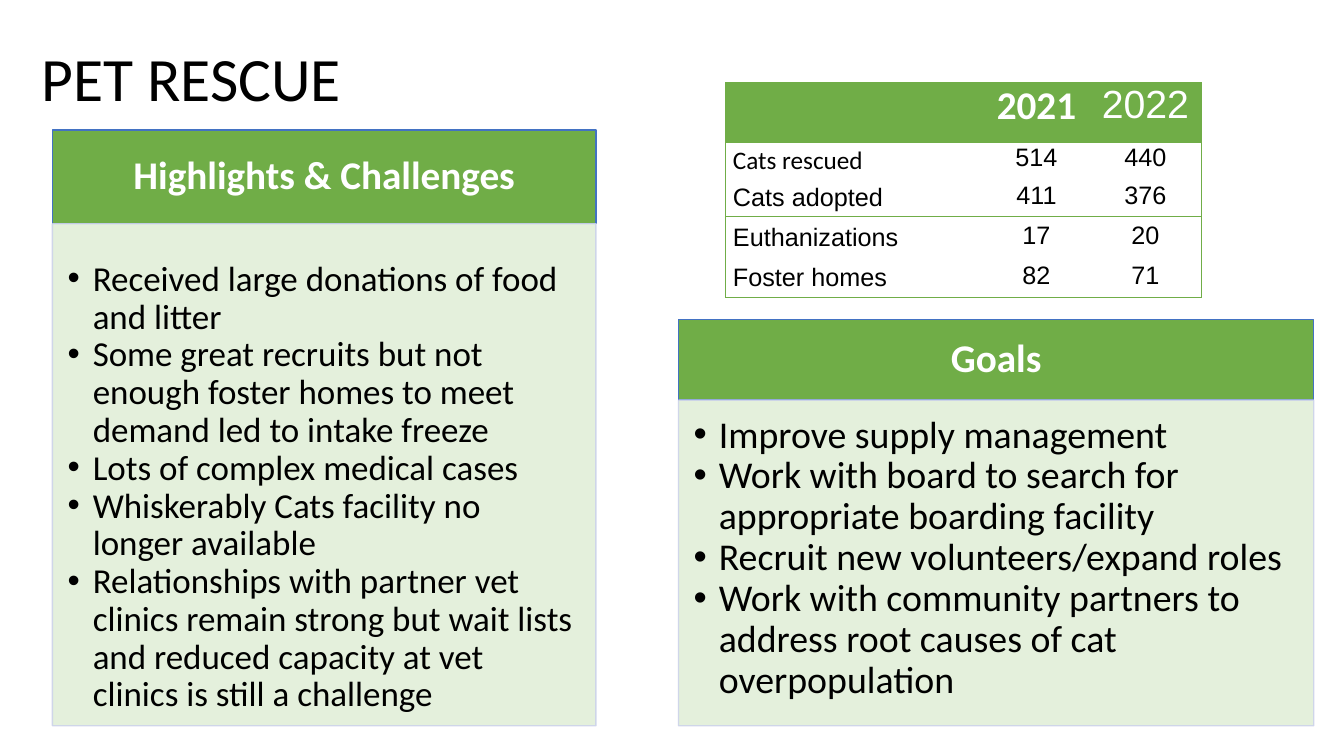
from lxml import etree
from pptx import Presentation
from pptx.dml.color import RGBColor
from pptx.enum import text
from pptx.oxml import ns
from pptx.util import Inches, Pt

TITLE = "PET RESCUE"
HIGHLIGHTS = [
    "Received large donations of food and litter",
    "Some great recruits but not enough foster homes to meet demand led to intake freeze",
    "Lots of complex medical cases",
    "Whiskerably Cats facility no longer available",
    "Relationships with partner vet clinics remain strong but wait lists "
    "and reduced capacity at vet clinics is still a challenge",
]
GOALS = [
    "Improve supply management",
    "Work with board to search for appropriate boarding facility",
    "Recruit new volunteers/expand roles",
    "Work with community partners to address root causes of cat overpopulation",
]
# heading, items, left, top, width, heading height, item size, top inset,
# placeholder numbers of heading and list
PANELS = [
    ("Highlights & Challenges", HIGHLIGHTS, 0.52, 1.29, 5.39, 0.93, 25, 0.37, (1, 2)),
    ("Goals", GOALS, 6.73, 3.17, 6.3, 0.8, 27, 0.15, (3, 4)),
]
PANEL_BOTTOM = 7.2
STATISTICS = [
    ("", "2021", "2022"),
    ("Cats rescued", "514", "440"),
    ("Cats adopted", "411", "376"),
    ("Euthanizations", "17", "20"),
    ("Foster homes", "82", "71"),
]
TABLE_LEFT, TABLE_TOP = 7.2, 0.82
COLUMN_WIDTHS = [2.56, 1.04, 1.12]
ROW_HEIGHTS = [0.6, 0.33, 0.4, 0.4, 0.4]
CALIBRI_CELLS = {(0, 1), (1, 0)}
RULED_ROW = 3

GREEN = RGBColor(0x70, 0xAD, 0x47)
PALE_GREEN = RGBColor(0xE1, 0xEF, 0xD8)
BLUE = RGBColor(0x43, 0x72, 0xC3)
PALE_BLUE = RGBColor(0xCC, 0xD3, 0xEA)
BLACK = RGBColor(0, 0, 0)
WHITE = RGBColor(0xFF, 0xFF, 0xFF)


def place(shape, left, top, width, height):
    shape.left, shape.top = Inches(left), Inches(top)
    shape.width, shape.height = Inches(width), Inches(height)


def set_frame(frame, anchor, left, top, right, bottom):
    frame.word_wrap = True
    frame.auto_size = text.MSO_AUTO_SIZE.NONE
    frame.vertical_anchor = anchor
    frame.margin_left, frame.margin_top = Inches(left), Inches(top)
    frame.margin_right, frame.margin_bottom = Inches(right), Inches(bottom)


def write(paragraph, words, size, color, align, spacing, bold=False, font="Calibri"):
    paragraph.alignment = align
    paragraph.line_spacing = spacing
    paragraph.space_before = Pt(0)
    run = paragraph.add_run()
    run.text = words
    run.font.name, run.font.size, run.font.bold = font, Pt(size), bold
    run.font.color.rgb = color


def paint(shape, fill, line, opacity=None):
    shape.fill.solid()
    shape.fill.fore_color.rgb = fill
    shape.line.color.rgb = line
    shape.line.width = Pt(1)
    if opacity:
        for color in shape._element.spPr.iter(ns.qn("a:srgbClr")):
            etree.SubElement(color, ns.qn("a:alpha"), val=str(opacity * 1000))


def add_bullet(paragraph):
    properties = paragraph._p.get_or_add_pPr()
    indent = Inches(0.25)
    properties.set("marL", str(indent))
    properties.set("indent", str(-indent))
    etree.SubElement(properties, ns.qn("a:buFont"), typeface="Arial")
    etree.SubElement(properties, ns.qn("a:buChar"), char="•")


def set_borders(cell, visible):
    """Rule the visible sides in green and clear the others."""
    properties = cell._tc.get_or_add_tcPr()
    for index, side in enumerate(("lnL", "lnR", "lnT", "lnB")):
        line = etree.Element(ns.qn("a:" + side), w=str(Pt(0.75)))
        if side in visible:
            fill = etree.SubElement(line, ns.qn("a:solidFill"))
            etree.SubElement(fill, ns.qn("a:srgbClr"), val=str(GREEN))
        else:
            etree.SubElement(line, ns.qn("a:noFill"))
        properties.insert(index, line)


def add_panel(slide, heading, items, left, top, width, header, size, inset, numbers):
    heading_box, list_box = (slide.placeholders[number] for number in numbers)

    place(heading_box, left, top, width, header)
    paint(heading_box, GREEN, BLUE)
    set_frame(heading_box.text_frame, text.MSO_ANCHOR.MIDDLE, 0.2, 0.12, 0.2, 0.12)
    write(heading_box.text_frame.paragraphs[0], heading, 28, WHITE,
          text.PP_ALIGN.CENTER, 0.9, bold=True)

    place(list_box, left, top + header, width, PANEL_BOTTOM - top - header)
    paint(list_box, PALE_GREEN, PALE_BLUE, opacity=89)
    frame = list_box.text_frame
    set_frame(frame, text.MSO_ANCHOR.TOP, 0.15, inset, 0.2, 0.2)
    for index, item in enumerate(items):
        paragraph = frame.add_paragraph() if index else frame.paragraphs[0]
        write(paragraph, item, size, BLACK, text.PP_ALIGN.LEFT, 0.9)
        add_bullet(paragraph)


def add_statistics(slide):
    rows, columns = len(ROW_HEIGHTS), len(COLUMN_WIDTHS)
    table = slide.shapes.add_table(
        rows, columns, Inches(TABLE_LEFT), Inches(TABLE_TOP),
        Inches(sum(COLUMN_WIDTHS)), Inches(sum(ROW_HEIGHTS))).table
    for column, width in zip(table.columns, COLUMN_WIDTHS):
        column.width = Inches(width)
    for r, values in enumerate(STATISTICS):
        table.rows[r].height = Inches(ROW_HEIGHTS[r])
        for c, value in enumerate(values):
            cell = table.cell(r, c)
            cell.margin_left = cell.margin_right = Inches(0.07)
            cell.margin_top = cell.margin_bottom = Inches(0.05 if r > 1 else 0)
            if r == 0:
                cell.fill.solid()
                cell.fill.fore_color.rgb = GREEN
            else:
                cell.fill.background()
            sides = {"lnL": c == 0, "lnR": c == columns - 1,
                     "lnT": r in (0, RULED_ROW), "lnB": r in (RULED_ROW - 1, rows - 1)}
            set_borders(cell, [side for side, shown in sides.items() if shown])
            if value:
                write(cell.text_frame.paragraphs[0], value,
                      18 if r else 28, BLACK if r else WHITE,
                      text.PP_ALIGN.CENTER if c else text.PP_ALIGN.LEFT,
                      1.0 if c else 1.07, bold=(r, c) == (0, 1),
                      font="Calibri" if (r, c) in CALIBRI_CELLS else "Arial")


def main():
    presentation = Presentation()
    presentation.slide_width, presentation.slide_height = Inches(13.33), Inches(7.5)
    comparison = presentation.slide_layouts.get_by_name("Comparison")
    slide = presentation.slides.add_slide(comparison)

    title = slide.shapes.title
    place(title, 0.31, 0.08, 11.5, 1.45)
    set_frame(title.text_frame, text.MSO_ANCHOR.MIDDLE, 0.1, 0.05, 0.1, 0.05)
    write(title.text_frame.paragraphs[0], TITLE, 44, BLACK, text.PP_ALIGN.LEFT, 0.9)

    for panel in PANELS:
        add_panel(slide, *panel)
    add_statistics(slide)
    presentation.save("out.pptx")


if __name__ == "__main__":
    main()
